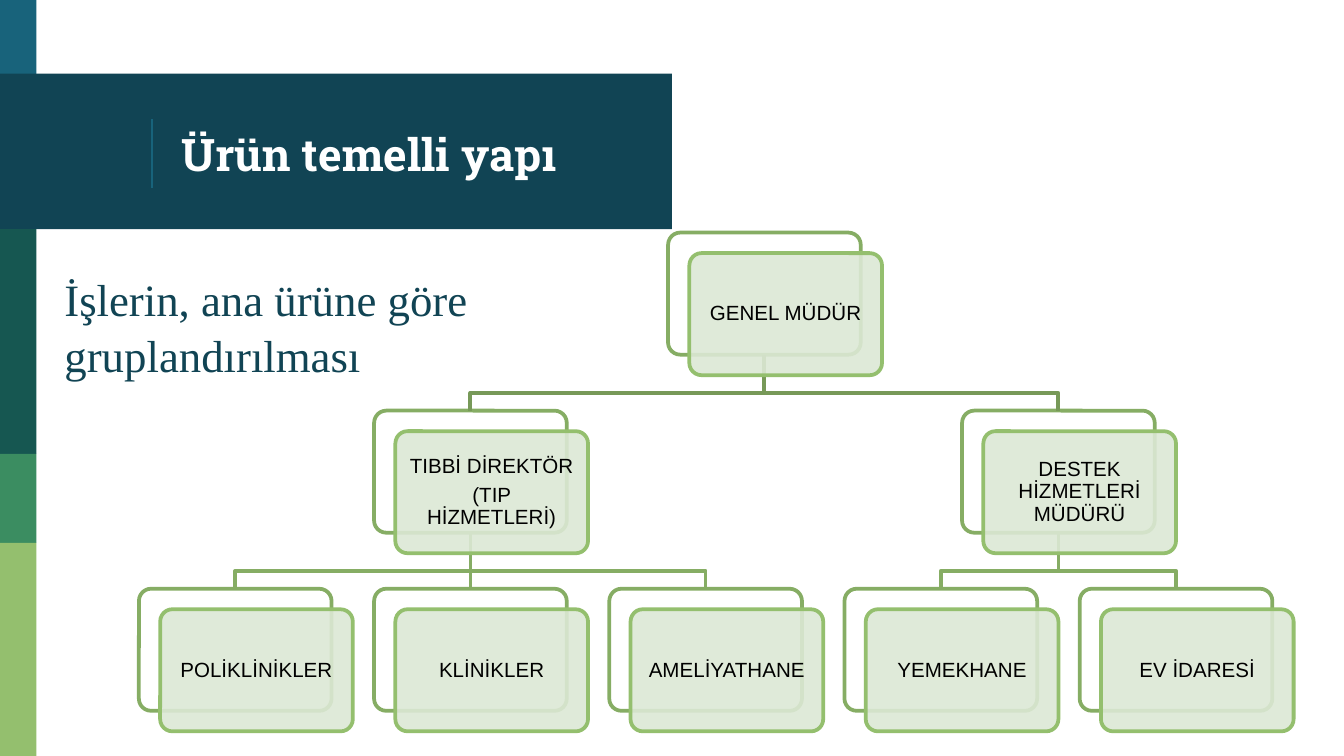
from dataclasses import dataclass

from lxml.etree import SubElement
from pptx import Presentation
from pptx.dml.color import RGBColor
from pptx.enum.shapes import MSO_CONNECTOR, MSO_SHAPE
from pptx.enum.text import MSO_ANCHOR, MSO_AUTO_SIZE, PP_ALIGN
from pptx.oxml.ns import qn
from pptx.util import Pt


@dataclass(frozen=True)
class Theme:
    blue: str = "18637B"
    navy: str = "114454"
    teal: str = "165751"
    green: str = "3B8D61"
    lime: str = "94BF6E"
    white: str = "FFFFFF"
    black: str = "000000"
    card_fill: str = "DCE8D5"
    card_alpha: int = 90
    back_line: str = "86AD64"
    top_link: str = "779958"
    title_font: str = "Roboto Slab"
    body_font: str = "Times New Roman"
    chart_font: str = "Arial"
    heading_size: int = 24
    card_size: int = 11
    line_width: float = 2


@dataclass(frozen=True)
class Position:
    paragraphs: tuple
    center: float
    level: int
    parent: int | None = None


CARD_WIDTH, CARD_HEIGHT = 103.2, 65.4
FRONT_DX, FRONT_DY = 11.4, 11
FIRST_TOP, LEVEL_STEP = 124.6, 95.4
COLUMN = 126
LINK_BEND = 20.5

# Each parent index refers to this list.
POSITIONS = [
    Position(("GENEL MÜDÜR",), 3.25 * COLUMN, 0),
    Position(("TIBBİ DİREKTÖR", "(TIP HİZMETLERİ)"), 2 * COLUMN, 1, 0),
    Position(("DESTEK HİZMETLERİ MÜDÜRÜ",), 4.5 * COLUMN, 1, 0),
    Position(("POLİKLİNİKLER",), COLUMN, 2, 1),
    Position(("KLİNİKLER",), 2 * COLUMN, 2, 1),
    Position(("AMELİYATHANE",), 3 * COLUMN, 2, 1),
    Position(("YEMEKHANE",), 4 * COLUMN, 2, 2),
    Position(("EV İDARESİ",), 5 * COLUMN, 2, 2),
]


class SlideBuilder:
    def __init__(self, slide, theme):
        self.slide = slide
        self.theme = theme

    def band(self, left, top, width, height, color):
        shape = self.slide.shapes.add_shape(
            MSO_SHAPE.RECTANGLE, Pt(left), Pt(top), Pt(width), Pt(height))
        shape.shadow.inherit = False
        shape.fill.solid()
        shape.fill.fore_color.rgb = RGBColor.from_string(color)
        shape.line.fill.background()

    def line(self, start, end, color, width):
        connector = self.slide.shapes.add_connector(
            MSO_CONNECTOR.STRAIGHT, *map(Pt, start + end))
        connector.line.color.rgb = RGBColor.from_string(color)
        connector.line.width = Pt(width)
        SubElement(connector.element.spPr, qn("a:effectLst"))
        return connector

    def elbow(self, start, end, color):
        """Draw an open path that goes down, across and down again."""
        bend = start[1] + LINK_BEND
        points = [(start[0], bend), (end[0], bend), end]
        builder = self.slide.shapes.build_freeform(Pt(start[0]), Pt(start[1]))
        builder.add_line_segments([(Pt(x), Pt(y)) for x, y in points], close=False)
        shape = builder.convert_to_shape()
        shape.shadow.inherit = False
        shape.fill.background()
        shape.line.color.rgb = RGBColor.from_string(color)
        shape.line.width = Pt(self.theme.line_width)

    def text(self, left, top, width, height, content, font, color, inset,
             anchor=MSO_ANCHOR.TOP, bold=False, spacing=1.0, grow=False):
        box = self.slide.shapes.add_textbox(Pt(left), Pt(top), Pt(width), Pt(height))
        frame = box.text_frame
        frame.word_wrap = True
        frame.vertical_anchor = anchor
        if grow:
            frame.auto_size = MSO_AUTO_SIZE.SHAPE_TO_FIT_TEXT
        frame.margin_left, frame.margin_right = Pt(inset[0]), Pt(inset[0])
        frame.margin_top, frame.margin_bottom = Pt(inset[1]), Pt(inset[1])
        paragraph = frame.paragraphs[0]
        paragraph.text = content
        paragraph.line_spacing = spacing
        self.style(paragraph, font, self.theme.heading_size, color, bold)

    def style(self, paragraph, font, size, color, bold=False):
        paragraph.font.name = font
        paragraph.font.size = Pt(size)
        paragraph.font.bold = bold
        paragraph.font.color.rgb = RGBColor.from_string(color)

    def card(self, left, top, fill, line):
        shape = self.slide.shapes.add_shape(
            MSO_SHAPE.ROUNDED_RECTANGLE, Pt(left), Pt(top),
            Pt(CARD_WIDTH), Pt(CARD_HEIGHT))
        shape.adjustments[0] = 0.1
        shape.shadow.inherit = False
        shape.fill.solid()
        shape.fill.fore_color.rgb = RGBColor.from_string(fill)
        shape.line.color.rgb = RGBColor.from_string(line)
        shape.line.width = Pt(self.theme.line_width)
        return shape

    def front_card(self, left, top, paragraphs):
        theme = self.theme
        shape = self.card(left, top, theme.card_fill, theme.lime)
        color = shape.element.spPr.find(qn("a:solidFill")).find(qn("a:srgbClr"))
        SubElement(color, qn("a:alpha"), val=str(theme.card_alpha * 1000))
        frame = shape.text_frame
        frame.word_wrap = True
        frame.vertical_anchor = MSO_ANCHOR.MIDDLE
        frame.margin_left = frame.margin_right = Pt(3.6)
        frame.margin_top = frame.margin_bottom = Pt(3.6)
        for index, content in enumerate(paragraphs):
            paragraph = frame.add_paragraph() if index else frame.paragraphs[0]
            paragraph.text = content
            paragraph.alignment = PP_ALIGN.CENTER
            paragraph.line_spacing = 0.9
            paragraph.space_after = Pt(3.85)
            self.style(paragraph, theme.chart_font, theme.card_size, theme.black)

    def organization_chart(self, positions):
        """Layer back cards, then links, then front cards over both."""
        theme = self.theme
        corners = [(position.center - CARD_WIDTH / 2,
                    FIRST_TOP + position.level * LEVEL_STEP) for position in positions]
        backs = [self.card(*corner, theme.white, theme.back_line) for corner in corners]
        for index, position in enumerate(positions):
            if position.parent is None:
                continue
            parent = positions[position.parent]
            start = (parent.center, corners[position.parent][1] + CARD_HEIGHT)
            end = (position.center, corners[index][1])
            color = theme.back_line if parent.level else theme.top_link
            if parent.center == position.center:
                connector = self.line(start, end, color, theme.line_width)
                connector.begin_connect(backs[position.parent], 2)
                connector.end_connect(backs[index], 0)
            else:
                self.elbow(start, end, color)
        for (left, top), position in zip(corners, positions):
            self.front_card(left + FRONT_DX, top + FRONT_DY, position.paragraphs)


def main():
    presentation = Presentation()
    presentation.slide_width, presentation.slide_height = Pt(720), Pt(405)
    theme = Theme()
    slide = presentation.slides.add_slide(presentation.slide_layouts[6])
    builder = SlideBuilder(slide, theme)

    builder.band(0, 0, 19.5, 41.5, theme.blue)
    builder.band(0, 39.4, 360, 83.3, theme.navy)
    builder.band(0, 122.7, 19.5, 120.5, theme.teal)
    builder.band(0, 243.2, 19.5, 47.6, theme.green)
    builder.band(0, 290.8, 19.5, 114.2, theme.lime)
    builder.line((81.5, 64), (81.5, 100.8), theme.blue, 0.75)
    builder.text(90, 41.8, 252.7, 80.6, "Ürün temelli yapı", theme.title_font,
                 theme.white, (7.2, 7.2), MSO_ANCHOR.MIDDLE, bold=True)
    builder.organization_chart(POSITIONS)
    builder.text(27.4, 140.4, 238.3, 65.5, "İşlerin, ana ürüne göre gruplandırılması",
                 theme.body_font, theme.navy, (7.2, 3.6), spacing=1.05, grow=True)
    presentation.save("out.pptx")


if __name__ == "__main__":
    main()
